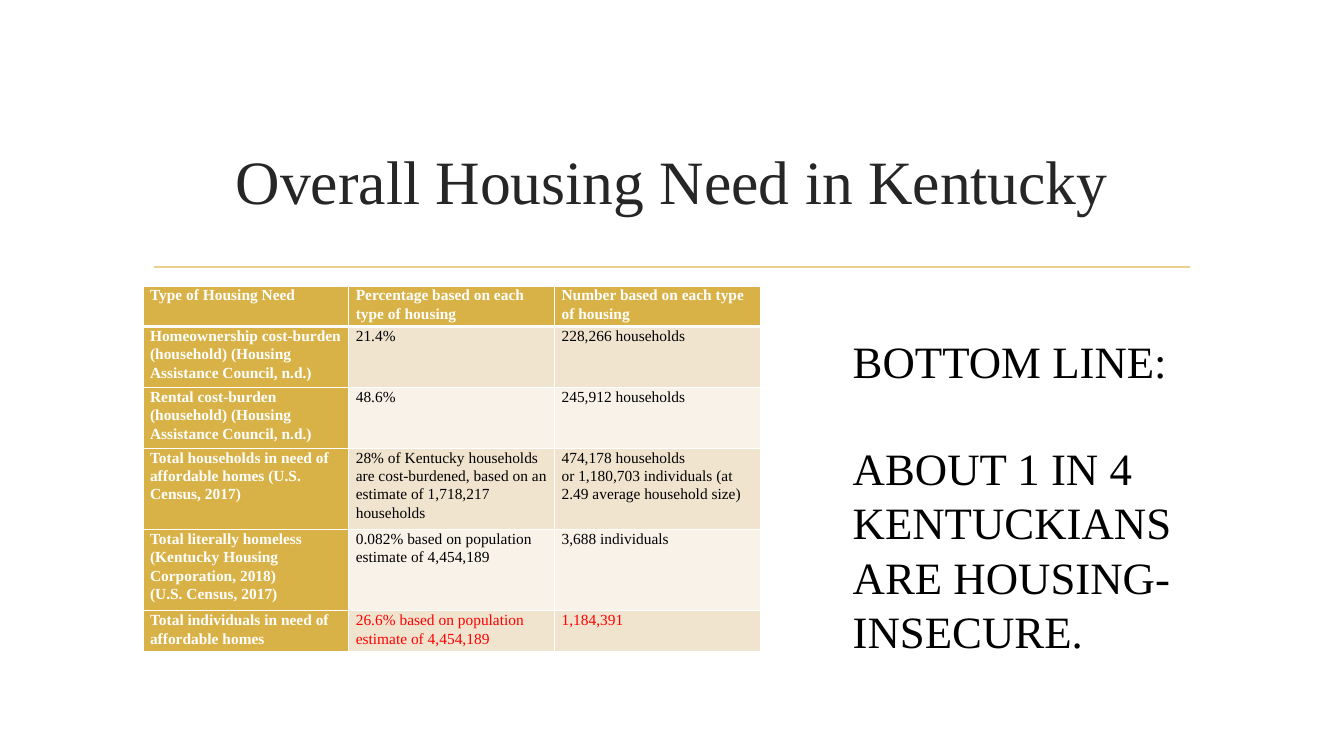
import pptx
import pptx.util
import pptx.dml.color
import pptx.enum.shapes
import pptx.enum.text
import pptx.oxml
import pptx.oxml.ns
from lxml import etree

Pt = pptx.util.Pt
RGB = pptx.dml.color.RGBColor.from_string
ALIGN = pptx.enum.text.PP_ALIGN
ANCHOR = pptx.enum.text.MSO_ANCHOR
COLORS = {"title": "262626", "rule": "E8D191", "gold": "D9B247", "dark_band": "F1E4CF",
          "light_band": "F8F2E9", "white": "FFFFFF", "black": "000000", "red": "FF0000"}


def write(tf, text, color, font, para):
    """Fill a text frame, one paragraph per line of text."""
    tf.word_wrap = True
    for i, line in enumerate(text.split("\n")):
        p = tf.paragraphs[0] if i == 0 else tf.add_paragraph()
        r = p.add_run()
        r.text = line
        r.font.name = "Times New Roman"
        r.font.color.rgb = RGB(COLORS[color])
        for name, value in font.items():
            setattr(r.font, name, value)
        for name, value in para.items():
            setattr(p, name, value)


def add_border(cell, index, side, width):
    """Put a white border on one side of a cell, ahead of its fill."""
    ln = pptx.oxml.parse_xml(
        f'<a:{side} xmlns:a="http://schemas.openxmlformats.org/drawingml/2006/main" w="{Pt(width)}">'
        f'<a:solidFill><a:srgbClr val="{COLORS["white"]}"/></a:solidFill></a:{side}>')
    cell._tc.get_or_add_tcPr().insert(index, ln)


prs = pptx.Presentation()
prs.slide_width, prs.slide_height = Pt(960), Pt(540)
s = prs.slides.add_slide(prs.slide_layouts[6])

# Rule under the title
rule = s.shapes.add_connector(pptx.enum.shapes.MSO_CONNECTOR.STRAIGHT,
                              Pt(110.2), Pt(190.8), Pt(850.3), Pt(190.8))
rule.line.color.rgb = RGB(COLORS["rule"])
rule.line.width = Pt(1.25)
etree.SubElement(rule._element.spPr, pptx.oxml.ns.qn("a:effectLst"))

# Title
tf = s.shapes.add_textbox(Pt(102.2), Pt(77), Pt(756), Pt(103)).text_frame
tf.vertical_anchor = ANCHOR.MIDDLE
write(tf, "Overall Housing Need in Kentucky", "title", {"size": Pt(44)}, {"alignment": ALIGN.CENTER})

# Housing need table
rows = [
    ("Type of Housing Need", "Percentage based on each type of housing",
     "Number based on each type of housing"),
    ("Homeownership cost-burden (household) (Housing Assistance Council, n.d.)",
     "21.4%", "228,266 households"),
    ("Rental cost-burden (household) (Housing Assistance Council, n.d.)",
     "48.6%", "245,912 households"),
    ("Total households in need of affordable homes (U.S. Census, 2017)",
     "28% of Kentucky households are cost-burdened, based on an estimate of 1,718,217 households",
     "474,178 households\nor 1,180,703 individuals (at 2.49 average household size)"),
    ("Total literally homeless (Kentucky Housing Corporation, 2018)\n(U.S. Census, 2017)",
     "0.082% based on population estimate of 4,454,189", "3,688 individuals"),
    ("Total individuals in need of affordable homes",
     "26.6% based on population estimate of 4,454,189", "1,184,391"),
]
line_counts = [2, 3, 3, 4, 4, 2]
line_height = 14.5
table = s.shapes.add_table(len(rows), 3, Pt(102.2), Pt(204.3), Pt(441),
                           Pt(line_height * sum(line_counts))).table
for col in table.columns:
    col.width = Pt(147)
margins = {"margin_left": Pt(5), "margin_right": Pt(5), "margin_top": 0, "margin_bottom": 0}
for i, texts in enumerate(rows):
    table.rows[i].height = Pt(line_height * line_counts[i])
    for j, text in enumerate(texts):
        cell = table.cell(i, j)
        heading = i == 0 or j == 0
        band = "dark_band" if i % 2 else "light_band"
        value_color = "red" if i == len(rows) - 1 else "black"
        cell.fill.solid()
        cell.fill.fore_color.rgb = RGB(COLORS["gold" if heading else band])
        for name, value in margins.items():
            setattr(cell, name, value)
        widths = {"lnL": 1, "lnR": 1, "lnT": 3 if i == 1 else 1, "lnB": 3 if i == 0 else 1}
        for index, (side, width) in enumerate(widths.items()):
            add_border(cell, index, side, width)
        write(cell.text_frame, text, "white" if heading else value_color,
              {"size": Pt(11), "bold": heading}, {"line_spacing": 1.07})

# Bottom line statement
tf = s.shapes.add_textbox(Pt(602), Pt(234.7), Pt(270), Pt(240)).text_frame
write(tf, "BOTTOM LINE:\nABOUT 1 IN 4 KENTUCKIANS ARE HOUSING-INSECURE.", "black",
      {"size": Pt(32)}, {"line_spacing": Pt(38.6)})
tf.paragraphs[1].space_before = Pt(38)

prs.save("out.pptx")
